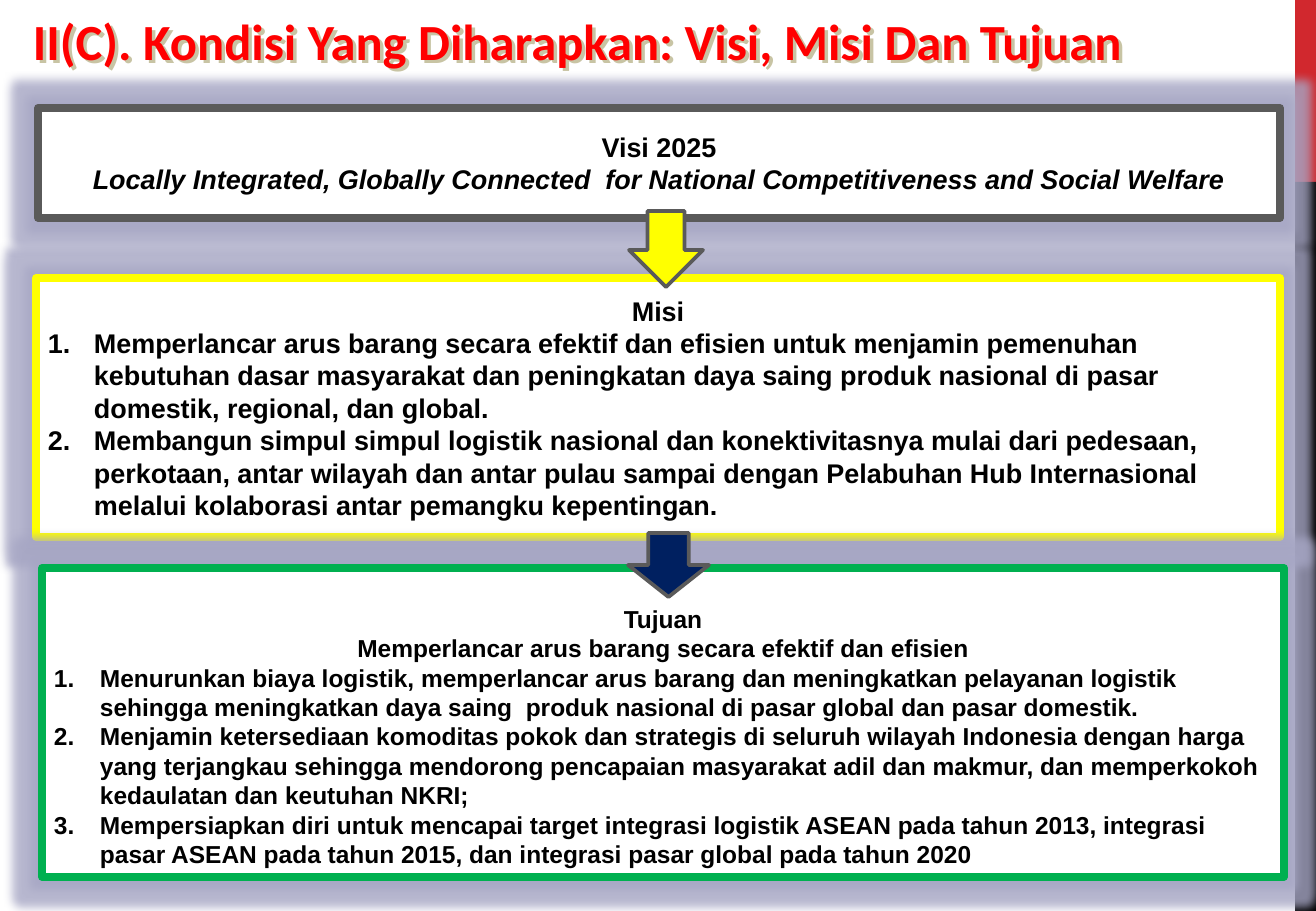
from lxml import etree
from pptx import Presentation
from pptx.dml.color import RGBColor
from pptx.enum.shapes import MSO_SHAPE as SHAPE
from pptx.enum.text import MSO_ANCHOR as ANCHOR, PP_ALIGN as ALIGN
from pptx.oxml import parse_xml
from pptx.oxml.ns import nsdecls, qn
from pptx.util import Pt

PX = 7526  # EMU per px, at 121.5 px to the inch
NUMBER_INDENT = 46 * PX
rgb = RGBColor.from_string

GLOW = '<a:glow {} rad="139700"><a:srgbClr val="A6A6C4"><a:alpha val="80000"/></a:srgbClr></a:glow>'
TITLE_SHADOW = ('<a:outerShdw {} dist="38100" dir="2700000" algn="tl" rotWithShape="0">'
                '<a:srgbClr val="C8C4A4"/></a:outerShdw>')

prs = Presentation()
prs.slide_width, prs.slide_height = 1316 * PX, 911 * PX
slide = prs.slides.add_slide(prs.slide_layouts[6])


def add_block(kind, box, fill=None, line=None, weight=0, effect=None):
    """Add a preset shape at box (left, top, width, height in px)."""
    block = slide.shapes.add_shape(kind, *[v * PX for v in box])
    block.shadow.inherit = False
    if fill:
        block.fill.solid()
        block.fill.fore_color.rgb = rgb(fill)
    else:
        block.fill.background()
    if line:
        block.line.color.rgb = rgb(line)
        block.line.width = Pt(weight)
    else:
        block.line.fill.background()
    if effect:
        effects = block._element.spPr.find(qn("a:effectLst"))
        effects.append(parse_xml(effect.format(nsdecls("a"))))
    return block


def write(block, paragraphs, size, font="Arial", color="000000", anchor=ANCHOR.MIDDLE, top=6):
    """Fill block with (text, style) pairs; style is left, center, italic or number."""
    frame = block.text_frame
    frame.word_wrap = True
    frame.vertical_anchor = anchor
    frame.margin_top = top * PX
    for i, (text, style) in enumerate(paragraphs):
        para = frame.paragraphs[0] if i == 0 else frame.add_paragraph()
        para.alignment = ALIGN.CENTER if style in ("center", "italic") else ALIGN.LEFT
        if style == "number":
            props = para._p.get_or_add_pPr()
            props.set("marL", str(NUMBER_INDENT))
            props.set("indent", str(-NUMBER_INDENT))
            etree.SubElement(props, qn("a:buAutoNum"), type="arabicPeriod")
        run = para.add_run()
        run.text = text
        run.font.name, run.font.size = font, Pt(size)
        run.font.bold, run.font.italic = True, style == "italic"
        run.font.color.rgb = rgb(color)


# Side band
add_block(SHAPE.RECTANGLE, (1295, 0, 21, 182), "D1282E")
add_block(SHAPE.RECTANGLE, (1295, 182, 21, 729), "000000")

title = add_block(SHAPE.RECTANGLE, (21, 2, 1247, 76), effect=TITLE_SHADOW)
write(title, [("II(C). Kondisi Yang Diharapkan: Visi, Misi Dan Tujuan", "left")],
      30, font="Calibri", color="FF0000")

misi = add_block(SHAPE.RECTANGLE, (36, 278, 1244, 259), "FFFFFF", "FFFF00", 4.5, GLOW)
write(misi, [
    ("Misi", "center"),
    ("Memperlancar arus barang secara efektif dan efisien untuk menjamin pemenuhan kebutuhan "
     "dasar masyarakat dan peningkatan daya saing produk nasional di pasar domestik, regional, "
     "dan global.", "number"),
    ("Membangun simpul simpul logistik nasional dan konektivitasnya mulai dari pedesaan, "
     "perkotaan, antar wilayah dan antar pulau sampai dengan Pelabuhan Hub Internasional "
     "melalui kolaborasi antar pemangku kepentingan.", "number"),
], 16)

tujuan = add_block(SHAPE.RECTANGLE, (42, 568, 1242, 309), "FFFFFF", "00B050", 4.5, GLOW)
write(tujuan, [
    ("Tujuan", "center"),
    ("Memperlancar arus barang secara efektif dan efisien", "center"),
    ("Menurunkan biaya logistik, memperlancar arus barang dan meningkatkan pelayanan logistik "
     "sehingga meningkatkan daya saing  produk nasional di pasar global dan pasar domestik.",
     "number"),
    ("Menjamin ketersediaan komoditas pokok dan strategis di seluruh wilayah Indonesia dengan "
     "harga yang terjangkau sehingga mendorong pencapaian masyarakat adil dan makmur, dan "
     "memperkokoh kedaulatan dan keutuhan NKRI;", "number"),
    ("Mempersiapkan diri untuk mencapai target integrasi logistik ASEAN pada tahun 2013, "
     "integrasi pasar ASEAN pada tahun 2015, dan integrasi pasar global pada tahun 2020",
     "number"),
], 14.5, anchor=ANCHOR.TOP, top=36)

visi = add_block(SHAPE.RECTANGLE, (38, 108, 1242, 110), "FFFFFF", "5A5A5A", 4.5, GLOW)
write(visi, [
    ("Visi 2025", "center"),
    ("Locally Integrated, Globally Connected  for National Competitiveness and Social Welfare",
     "italic"),
], 16)

# Arrows from Visi to Misi and from Misi to Tujuan
add_block(SHAPE.DOWN_ARROW, (629, 211, 74, 76), "FFFF00", "5A5A5A", 2.25)
add_block(SHAPE.DOWN_ARROW, (628, 533, 81, 64), "002060", "5A5A5A", 2.25)

prs.save("out.pptx")
